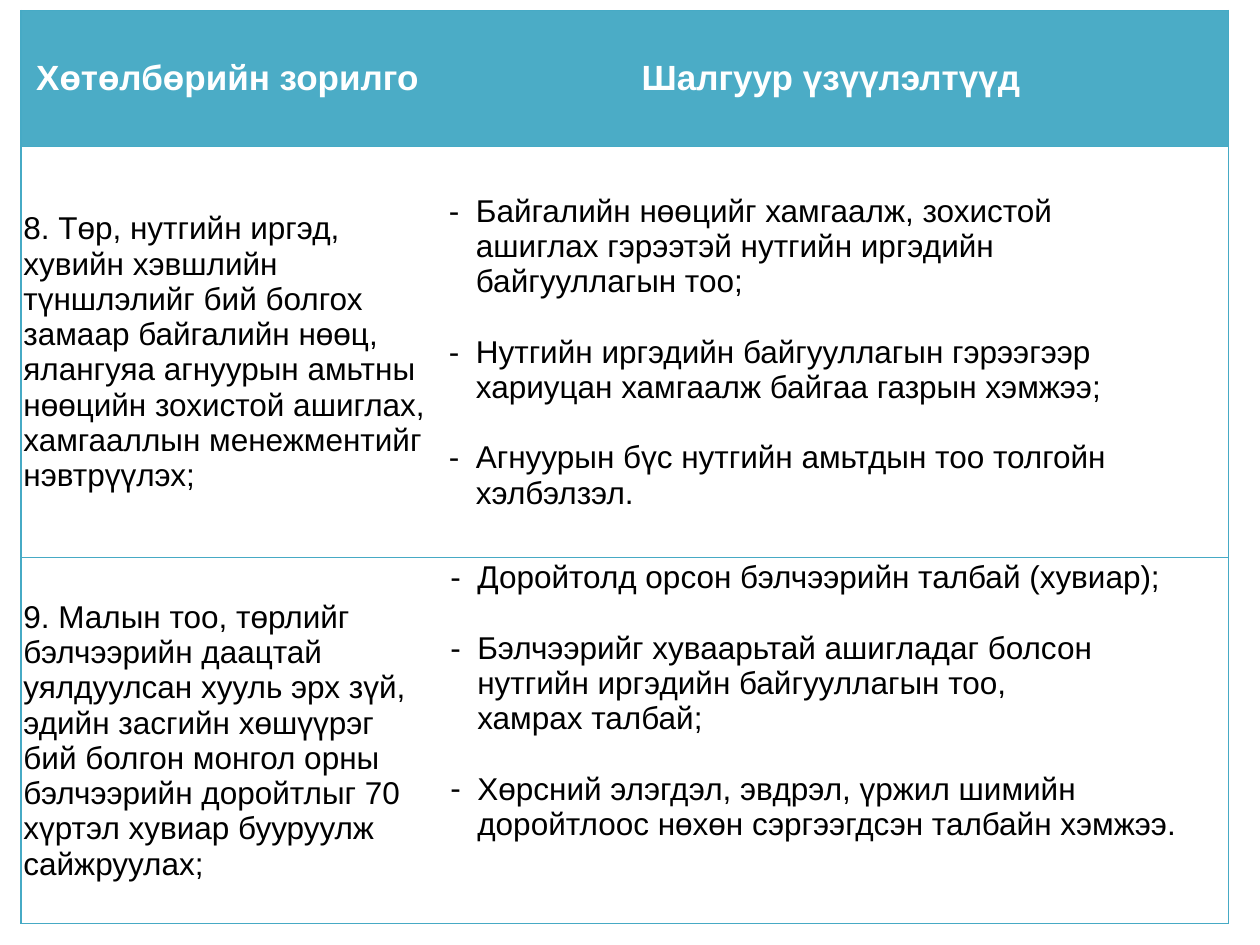
from lxml import etree
from pptx import Presentation
from pptx.dml.color import RGBColor
from pptx.enum.text import MSO_ANCHOR, PP_ALIGN
from pptx.oxml.ns import qn
from pptx.util import Pt

TOP, MIDDLE = MSO_ANCHOR.TOP, MSO_ANCHOR.MIDDLE
LEFT, CENTER = PP_ALIGN.LEFT, PP_ALIGN.CENTER

THEME = {
    "font": "Arial",
    "header_size": 20,
    "body_size": 18,
    "header_fill": "4BACC6",
    "border": "46AAC5",
    "header_text": "FFFFFF",
    "body_text": "000000",
}
BLANK_LAYOUT = 6
HANGING = 15.4  # distance from dash to text, points
ITEM_GAP = 20  # space between list items, points


def write_cell(cell, items, size=THEME["body_size"], color=THEME["body_text"],
               bold=False, align=LEFT, anchor=MIDDLE, dash_at=None):
    """Write one paragraph per item; dash_at is the dash position of a list."""
    cell.vertical_anchor = anchor
    cell.margin_left = cell.margin_right = Pt(1.4)
    cell.margin_top = cell.margin_bottom = Pt(1.4)
    frame = cell.text_frame
    for index, item in enumerate(items):
        paragraph = frame.paragraphs[0] if index == 0 else frame.add_paragraph()
        paragraph.text = item
        paragraph.alignment = align
        if index:
            paragraph.space_before = Pt(ITEM_GAP)
        if dash_at is not None:
            properties = paragraph._p.get_or_add_pPr()
            properties.set("marL", str(Pt(dash_at + HANGING)))
            properties.set("indent", str(-Pt(HANGING)))
            etree.SubElement(properties, qn("a:buFont"), typeface=THEME["font"])
            etree.SubElement(properties, qn("a:buChar"), char="-")
        paragraph.font.name = THEME["font"]
        paragraph.font.size = Pt(size)
        paragraph.font.bold = bold
        paragraph.font.color.rgb = RGBColor.from_string(color)


def set_borders(cell, visible_sides):
    """Draw the given sides (of L, R, T, B) and hide the others."""
    properties = cell._tc.get_or_add_tcPr()
    for side in "LRTB":
        line = etree.SubElement(properties, qn(f"a:ln{side}"), w=str(Pt(0.75)))
        if side in visible_sides:
            fill = etree.SubElement(line, qn("a:solidFill"))
            etree.SubElement(fill, qn("a:srgbClr"), val=THEME["border"])
        else:
            etree.SubElement(line, qn("a:noFill"))


presentation = Presentation()
presentation.slide_width, presentation.slide_height = Pt(720), Pt(540)
slide = presentation.slides.add_slide(presentation.slide_layouts[BLANK_LAYOUT])

# Table grid
column_widths = [236, 453.8]
row_heights = [77.8, 235, 209]
shape = slide.shapes.add_table(
    len(row_heights), len(column_widths), Pt(12), Pt(6),
    Pt(sum(column_widths)), Pt(sum(row_heights)))
table = shape.table
table.horz_banding = False
for column, width in zip(table.columns, column_widths):
    column.width = Pt(width)
for row, height in zip(table.rows, row_heights):
    row.height = Pt(height)

# Borders around each row, none between the columns
for row in table.rows:
    for cell, outer_side in zip(row.cells, "LR"):
        set_borders(cell, outer_side + "TB")
        cell.fill.background()

# Header row
for cell, heading in zip(table.rows[0].cells,
                         ["Хөтөлбөрийн зорилго", "Шалгуур үзүүлэлтүүд"]):
    cell.fill.solid()
    cell.fill.fore_color.rgb = RGBColor.from_string(THEME["header_fill"])
    write_cell(cell, [heading], size=THEME["header_size"],
               color=THEME["header_text"], bold=True, align=CENTER)

# Goals and their indicators; \v is a line break inside a paragraph
goals = [
    ("8. Төр, нутгийн иргэд, хувийн хэвшлийн түншлэлийг бий болгох замаар "
     "байгалийн нөөц, ялангуяа агнуурын амьтны нөөцийн зохистой ашиглах, "
     "хамгааллын менежментийг нэвтрүүлэх;",
     ["Байгалийн нөөцийг хамгаалж, зохистой\v"
      "ашиглах гэрээтэй нутгийн иргэдийн\vбайгууллагын тоо;",
      "Нутгийн иргэдийн байгууллагын гэрээгээр\v"
      "хариуцан хамгаалж байгаа газрын хэмжээ;",
      "Агнуурын бүс нутгийн амьтдын тоо толгойн\vхэлбэлзэл."],
     MIDDLE, 7.2),
    ("9. Малын тоо, төрлийг бэлчээрийн даацтай уялдуулсан хууль эрх зүй, "
     "эдийн засгийн хөшүүрэг бий болгон монгол орны бэлчээрийн доройтлыг 70 "
     "хүртэл хувиар бууруулж сайжруулах;",
     ["Доройтолд орсон бэлчээрийн талбай (хувиар);",
      "Бэлчээрийг хуваарьтай ашигладаг болсон\v"
      "нутгийн иргэдийн байгууллагын тоо,\vхамрах талбай;",
      "Хөрсний элэгдэл, эвдрэл, үржил шимийн\v"
      "доройтлоос нөхөн сэргээгдсэн талбайн хэмжээ."],
     TOP, 8),
]
for row_index, (goal, indicators, anchor, dash_at) in enumerate(goals, start=1):
    write_cell(table.cell(row_index, 0), [goal])
    write_cell(table.cell(row_index, 1), indicators, anchor=anchor, dash_at=dash_at)

presentation.save("out.pptx")
